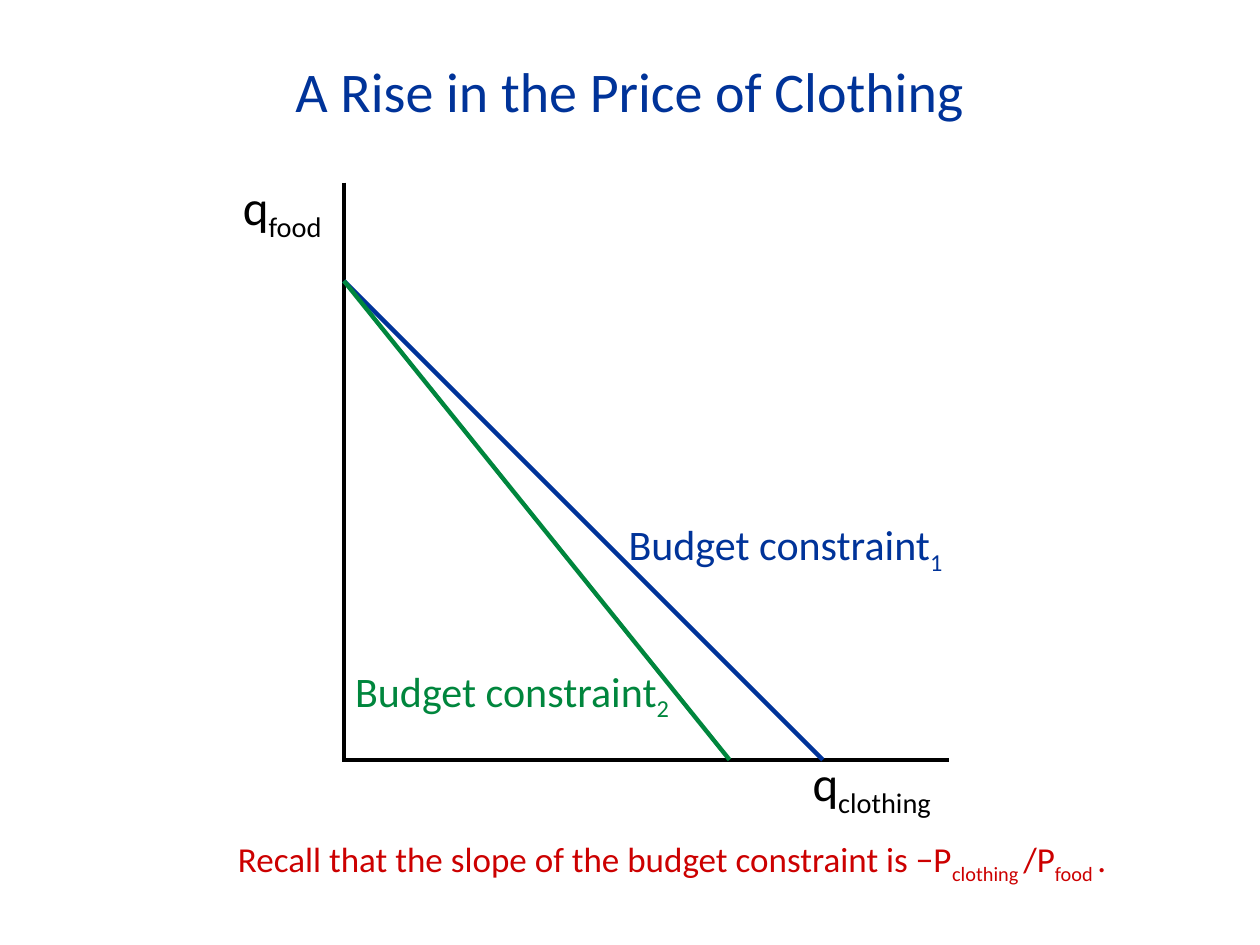
from lxml.etree import SubElement
from pptx import Presentation
from pptx.dml.color import RGBColor
from pptx.enum.shapes import MSO_CONNECTOR, MSO_SHAPE
from pptx.enum.text import MSO_ANCHOR, PP_ALIGN
from pptx.oxml.ns import qn
from pptx.util import Inches, Pt

BLACK, WHITE, BLUE, GREEN, RED = "000000", "FFFFFF", "003399", "00863D", "CC0000"
ORIGIN_X, ORIGIN_Y = 2.73, 6.03
FOOD_INTERCEPT = 2.23


def color(hex_code):
    """Turn a hex string into a colour."""
    return RGBColor.from_string(hex_code)


def write_text(shape, *parts, size, font_color, align=PP_ALIGN.LEFT, spacing=1.0):
    """Write one paragraph whose every second part is a subscript."""
    paragraph = shape.text_frame.paragraphs[0]
    paragraph.alignment = align
    paragraph.line_spacing = spacing
    for index, part in enumerate(parts):
        run = paragraph.add_run()
        run.text = part
        run.font.name = "Calibri"
        run.font.size = Pt(size)
        run.font.color.rgb = color(font_color)
        if index % 2:
            run.font._element.set("baseline", "-25000")


def add_title(slide, text):
    """Add the white panel with the title at its top."""
    panel = slide.shapes.add_shape(
        MSO_SHAPE.RECTANGLE, Inches(0.7), Inches(0.45), Inches(8.6), Inches(6.6))
    panel.shadow.inherit = False
    panel.fill.solid()
    panel.fill.fore_color.rgb = color(WHITE)
    panel.line.fill.background()
    frame = panel.text_frame
    frame.vertical_anchor = MSO_ANCHOR.TOP
    frame.margin_top = frame.margin_bottom = 0
    write_text(panel, text, size=32, font_color=BLUE, align=PP_ALIGN.CENTER)


def add_label(slide, position, *parts, **text_format):
    """Add a text box at left, top, width and height in inches."""
    label = slide.shapes.add_textbox(*map(Inches, position))
    label.text_frame.word_wrap = True
    write_text(label, *parts, **text_format)


def add_line(slide, start, end, line_color):
    """Add a straight line between two points in inches."""
    line = slide.shapes.add_connector(
        MSO_CONNECTOR.STRAIGHT, *map(Inches, (*start, *end)))
    line.line.color.rgb = color(line_color)
    line.line.width = Pt(2.5)
    SubElement(line._element.spPr, qn("a:effectLst"))


def add_axes(slide):
    """Add both axes with their quantity labels."""
    add_line(slide, (ORIGIN_X, 1.45), (ORIGIN_X, 6.05), BLACK)
    add_line(slide, (ORIGIN_X, ORIGIN_Y), (7.53, ORIGIN_Y), BLACK)
    add_label(slide, (6.35, 5.92, 1.32, 0.57), "q", "clothing",
              size=28, font_color=BLACK)
    add_label(slide, (1.83, 1.4, 1.17, 0.49), "q", "food",
              size=28, font_color=BLACK, spacing=0.8)


def add_constraint(slide, number, clothing_intercept, label_left, label_top, line_color):
    """Add a budget line from the food axis to the clothing axis, with its label."""
    add_line(slide, (ORIGIN_X, FOOD_INTERCEPT), (clothing_intercept, ORIGIN_Y), line_color)
    add_label(slide, (label_left, label_top, 3.17, 0.5), "Budget constraint", number,
              size=24, font_color=line_color)


def main():
    """Build and save the slide."""
    presentation = Presentation()
    presentation.slide_width, presentation.slide_height = Inches(10), Inches(7.5)
    slide = presentation.slides.add_slide(presentation.slide_layouts[6])
    add_title(slide, "A Rise in the Price of Clothing")
    add_axes(slide)
    add_constraint(slide, "1", 6.53, 4.89, 4.07, BLUE)
    add_constraint(slide, "2", 5.79, 2.72, 5.23, GREEN)
    add_label(slide, (1.79, 6.6, 7.37, 0.44),
              "Recall that the slope of the budget constraint is −P", "clothing ",
              "/P", "food ", ".", size=20, font_color=RED)
    presentation.save("out.pptx")


if __name__ == "__main__":
    main()
